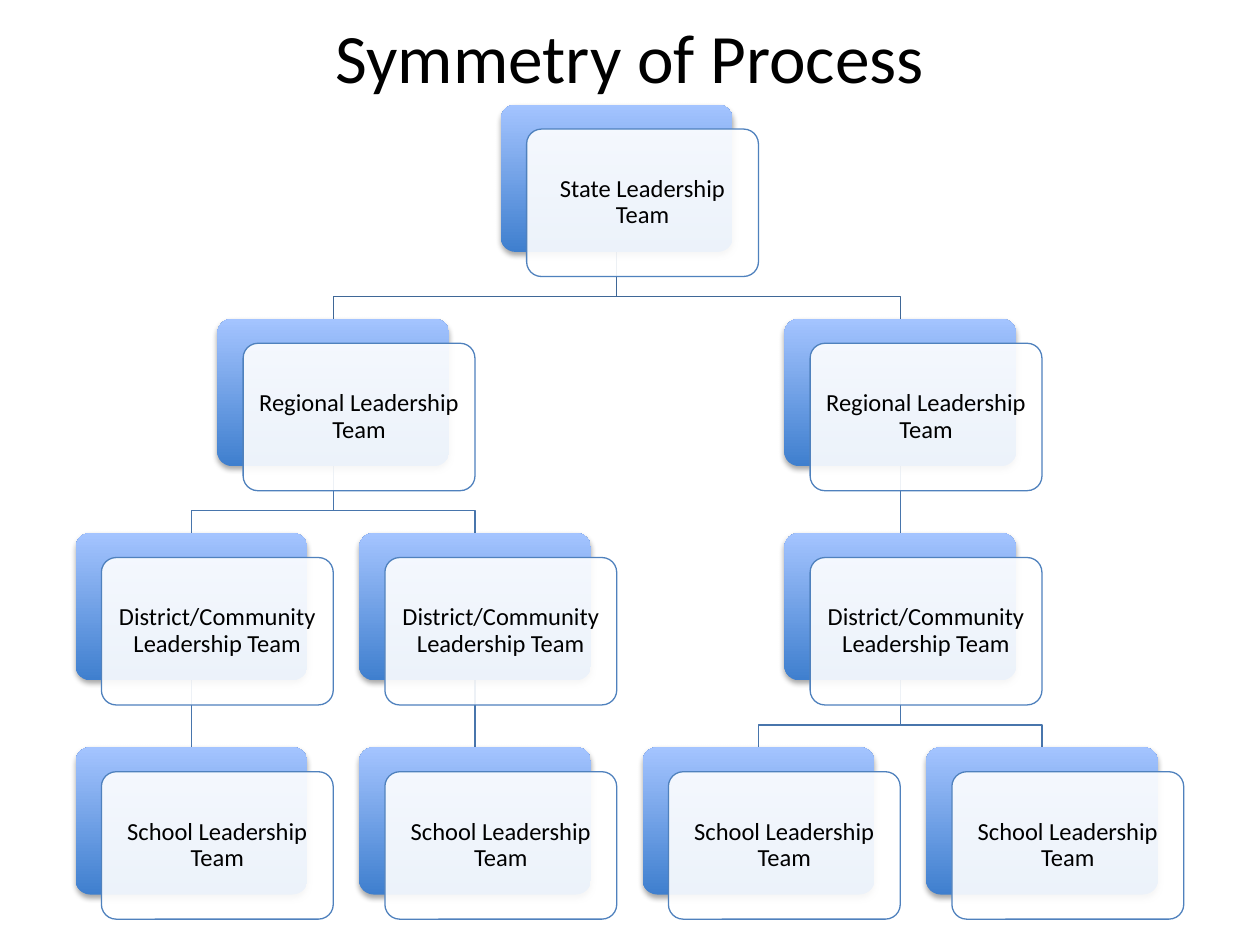
from dataclasses import dataclass

from lxml import etree
from pptx import Presentation
from pptx import util as u
from pptx.dml.color import RGBColor
from pptx.enum import shapes, text
from pptx.oxml import ns


@dataclass(frozen=True)
class Theme:
    """Colours, font and type sizes of the slide."""
    font: str = "Calibri"
    ink: str = "000000"
    paper: str = "FFFFFF"
    outline: str = "4F81BD"
    shade_bottom: str = "3F7FCE"
    shade_top: str = "A4C4FF"
    top_link: str = "3F6797"
    link: str = "4875AC"
    title_size: float = 39.6
    label_size: float = 14
    line_width: float = 0.75


@dataclass(frozen=True)
class Box:
    """A rectangle in inches."""
    left: float
    top: float
    width: float
    height: float

    def lengths(self):
        """Return the four sides as lengths."""
        return [u.Inches(side) for side in (self.left, self.top, self.width, self.height)]


THEME = Theme()
CARD_WIDTH, CARD_HEIGHT = 1.84, 1.17
COLUMN_STEP, ROW_STEP = 2.25, 1.7
FRONT_SHIFT = (0.205, 0.195)
BEND_RATIO = 0.67

STATE, REGIONAL = "State Leadership Team", "Regional Leadership Team"
DISTRICT, SCHOOL = "District/Community Leadership Team", "School Leadership Team"
TREE = (STATE, 1.5, [
    (REGIONAL, 0.5, [
        (DISTRICT, 0, [(SCHOOL, 0, [])]),
        (DISTRICT, 1, [(SCHOOL, 1, [])]),
    ]),
    (REGIONAL, 2.5, [
        (DISTRICT, 2.5, [(SCHOOL, 2, []), (SCHOOL, 3, [])]),
    ]),
])


def color(name):
    """Return a theme colour."""
    return RGBColor.from_string(getattr(THEME, name))


def style_line(line, name):
    """Give a line its colour and width."""
    line.color.rgb = color(name)
    line.width = u.Pt(THEME.line_width)


def add_effect(parent, tag, **attributes):
    """Add a drawing element with attributes."""
    return etree.SubElement(parent, ns.qn(tag), attributes)


def write_text(frame, words, size, margin):
    """Write one centred paragraph."""
    frame.word_wrap = True
    frame.vertical_anchor = text.MSO_ANCHOR.MIDDLE
    frame.margin_left = frame.margin_right = u.Inches(margin)
    frame.margin_top = frame.margin_bottom = u.Inches(margin)
    para = frame.paragraphs[0]
    para.alignment = text.PP_ALIGN.CENTER
    span = para.add_run()
    span.text = words
    span.font.name = THEME.font
    span.font.size = u.Pt(size)
    span.font.color.rgb = color("ink")
    return para


def add_title(page, box):
    """Place the slide title."""
    frame = page.shapes.add_textbox(*box.lengths()).text_frame
    write_text(frame, "Symmetry of Process", THEME.title_size, 0.05)


def add_rounded(page, box):
    """Add a rounded rectangle without a shadow."""
    shape = page.shapes.add_shape(shapes.MSO_SHAPE.ROUNDED_RECTANGLE, *box.lengths())
    shape.adjustments[0] = 0.1
    shape.shadow.inherit = False
    return shape


def add_card(page, box, words):
    """Place a shaded back plate and the labelled card in front of it."""
    plate = add_rounded(page, box)
    plate.line.fill.background()
    plate.fill.gradient()
    plate.fill.gradient_angle = 90
    for stop, name in zip(plate.fill.gradient_stops, ("shade_bottom", "shade_top")):
        stop.color.rgb = color(name)
    effects = plate._element.spPr.find(ns.qn("a:effectLst"))
    shadow = add_effect(effects, "a:outerShdw", blurRad="40000", dist="23000",
                        dir="5400000", rotWithShape="0")
    add_effect(add_effect(shadow, "a:srgbClr", val=THEME.ink), "a:alpha", val="35000")

    shift_x, shift_y = FRONT_SHIFT
    card = add_rounded(page, Box(box.left + shift_x, box.top + shift_y, box.width, box.height))
    card.fill.solid()
    card.fill.fore_color.rgb = color("paper")
    paint = card._element.spPr.find(ns.qn("a:solidFill"))
    add_effect(paint[0], "a:alpha", val="90000")
    style_line(card.line, "outline")
    para = write_text(card.text_frame, words, THEME.label_size, 0.06)
    para.line_spacing = 0.9
    para.space_after = u.Pt(0.35 * THEME.label_size)


def add_link(page, parent, child, name):
    """Join the bottom of one box to the top of another."""
    start_x, end_x = (u.Inches(box.left + box.width / 2) for box in (parent, child))
    start_y, end_y = u.Inches(parent.top + parent.height), u.Inches(child.top)
    if start_x == end_x:
        link = page.shapes.add_connector(shapes.MSO_CONNECTOR.STRAIGHT,
                                         start_x, start_y, end_x, end_y)
        add_effect(link._element.spPr, "a:effectLst")
    else:
        bend_y = start_y + int((end_y - start_y) * BEND_RATIO)
        builder = page.shapes.build_freeform(start_x, start_y)
        builder.add_line_segments([(start_x, bend_y), (end_x, bend_y), (end_x, end_y)],
                                  close=False)
        link = builder.convert_to_shape()
        link.fill.background()
        link.shadow.inherit = False
    style_line(link.line, name)


def card_box(area, column, level):
    """Return the place of a card on the grid."""
    return Box(area.left + column * COLUMN_STEP, area.top + level * ROW_STEP,
               CARD_WIDTH, CARD_HEIGHT)


def add_links(page, area, node, level=0):
    """Draw the links below a team, deepest first."""
    _, column, children = node
    for child in reversed(children):
        add_links(page, area, child, level + 1)
        add_link(page, card_box(area, column, level), card_box(area, child[1], level + 1),
                 "link" if level else "top_link")


def add_cards(page, area, node, level=0):
    """Draw a team and the teams below it."""
    words, column, children = node
    add_card(page, card_box(area, column, level), words)
    for child in children:
        add_cards(page, area, child, level + 1)


def add_chart_of_teams(page, area):
    """Place the whole hierarchy, with links behind cards."""
    add_links(page, area, TREE)
    add_cards(page, area, TREE)


def main():
    """Build and save the deck."""
    deck = Presentation()
    deck.slide_width, deck.slide_height = u.Inches(10), u.Inches(7.5)
    page = deck.slides.add_slide(deck.slide_layouts[6])
    add_title(page, Box(0.5, 0.05, 9, 0.78))
    add_chart_of_teams(page, Box(0.6, 0.83, 8.8, 6.47))
    deck.save("out.pptx")


if __name__ == "__main__":
    main()
